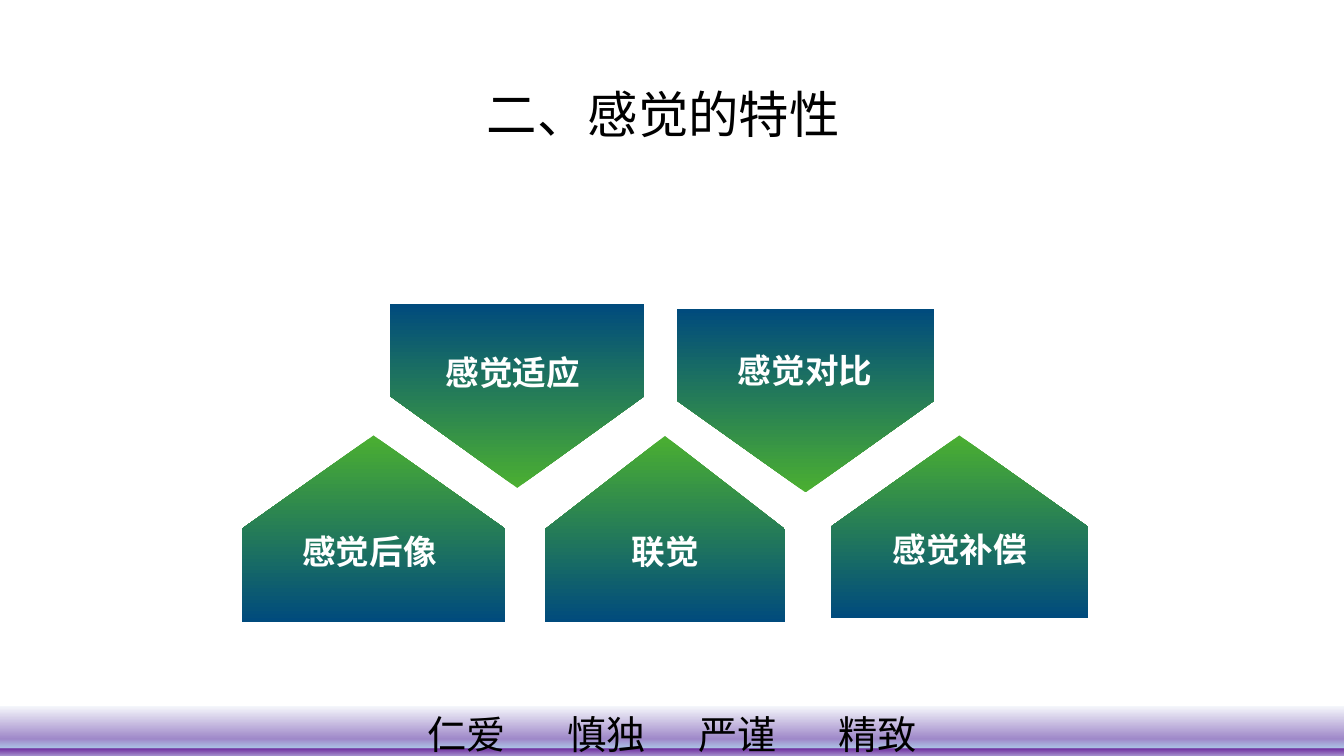
from dataclasses import dataclass

from lxml import etree
from pptx import Presentation
from pptx import util as u
from pptx.dml.color import RGBColor
from pptx.enum import shapes, text
from pptx.oxml import ns

PX = 9144
FONT = "Noto Sans CJK SC"
WHITE = RGBColor(0xFF, 0xFF, 0xFF)
BLACK = RGBColor(0x00, 0x00, 0x00)
GREEN = RGBColor(0x4B, 0xAF, 0x31)
BLUE = RGBColor(0x00, 0x4B, 0x7D)
PLATE_STOPS = [(0, GREEN), (100, BLUE)]
FOOTER_STOPS = [
    (0, RGBColor(0xF6, 0xF8, 0xFC)),
    (58, RGBColor(0x9F, 0x89, 0xC9)),
    (74, RGBColor(0xAB, 0xC0, 0xE4)),
    (75, RGBColor(0x70, 0x30, 0xA0)),
    (93, RGBColor(0xB7, 0xB5, 0xDE)),
    (96, RGBColor(0xC3, 0xCB, 0xE8)),
    (98, RGBColor(0xC9, 0xD6, 0xED)),
    (99, RGBColor(0xCD, 0xDF, 0xF1)),
    (100, RGBColor(0xC7, 0xD5, 0xED)),
]
FOOTER_WORDS = ["仁爱", "慎独", "严谨", "精致"]
FOOTER_TABS = [139, 269, 408]


@dataclass(frozen=True)
class Area:
    left: int
    top: int
    width: int
    height: int

    def emu(self) -> list[int]:
        return [side * PX for side in (self.left, self.top, self.width, self.height)]


@dataclass(frozen=True)
class Plate:
    label: str
    area: Area
    label_area: Area
    rotation: int


UP, DOWN = 270, 90
PLATES = [
    Plate("感觉补偿", Area(824, 432, 255, 181), Area(840, 525, 224, 69), UP),
    Plate("感觉对比", Area(672, 306, 255, 182), Area(671, 347, 255, 69), DOWN),
    Plate("感觉后像", Area(240, 432, 261, 185), Area(252, 527, 229, 70), UP),
    Plate("联觉", Area(541, 432, 238, 185), Area(556, 527, 208, 70), UP),
    Plate("感觉适应", Area(387, 302, 252, 182), Area(393, 349, 231, 69), DOWN),
]


def add_plain_shape(page, kind: shapes.MSO_SHAPE, area: Area):
    shape = page.shapes.add_shape(kind, *area.emu())
    shape.shadow.inherit = False
    shape.line.fill.background()
    return shape


def fill_gradient(shape, stops: list[tuple[int, RGBColor]], angle: int) -> None:
    shape.fill.gradient()
    shape.fill.gradient_angle = angle
    stop_list = shape.element.spPr.find(".//" + ns.qn("a:gsLst"))
    for stop in list(stop_list):
        stop_list.remove(stop)
    for position, color in stops:
        stop = etree.SubElement(stop_list, ns.qn("a:gs"), pos=str(position * 1000))
        etree.SubElement(stop, ns.qn("a:srgbClr"), val=str(color))


def write_text(box, words: str, size: int, color: RGBColor, align: text.PP_ALIGN,
               anchor: text.MSO_ANCHOR, margin: int = 0, bold: bool = False,
               tabs: tuple[int, ...] | list[int] = ()) -> None:
    frame = box.text_frame
    frame.word_wrap = True
    frame.vertical_anchor = anchor
    frame.margin_left = margin * PX
    frame.margin_right = frame.margin_top = frame.margin_bottom = 0
    para = frame.paragraphs[0]
    para.text = words
    para.alignment = align
    if tabs:
        tab_list = etree.SubElement(para._p.get_or_add_pPr(), ns.qn("a:tabLst"))
        for tab in tabs:
            etree.SubElement(tab_list, ns.qn("a:tab"), pos=str(tab * PX), algn="l")
    para.font.size = u.Pt(size)
    para.font.bold = bold
    para.font.color.rgb = color
    para.font.name = FONT
    for span in para.runs:
        east_asian = etree.SubElement(span._r.get_or_add_rPr(), ns.qn("a:ea"))
        east_asian.set("typeface", FONT)


def add_footer(page) -> None:
    band = add_plain_shape(page, shapes.MSO_SHAPE.RECTANGLE, Area(0, 700, 1333, 57))
    fill_gradient(band, FOOTER_STOPS, 270)
    write_text(band, "\t".join(FOOTER_WORDS), 28, BLACK, text.PP_ALIGN.LEFT,
               text.MSO_ANCHOR.MIDDLE, margin=424, tabs=FOOTER_TABS)


def add_title(page) -> None:
    title = add_plain_shape(page, shapes.MSO_SHAPE.RECTANGLE, Area(473, 77, 515, 71))
    title.fill.solid()
    title.fill.fore_color.rgb = WHITE
    write_text(title, "二、感觉的特性", 36, BLACK, text.PP_ALIGN.LEFT,
               text.MSO_ANCHOR.MIDDLE, margin=10)


def add_plate(page, plate: Plate) -> None:
    area = plate.area
    shift = (area.width - area.height) // 2
    unrotated = Area(area.left + shift, area.top - shift, area.height, area.width)
    pentagon = add_plain_shape(page, shapes.MSO_SHAPE.PENTAGON, unrotated)
    pentagon.rotation = plate.rotation
    fill_gradient(pentagon, PLATE_STOPS, 180)
    label = page.shapes.add_textbox(*plate.label_area.emu())
    write_text(label, plate.label, 24, WHITE, text.PP_ALIGN.CENTER,
               text.MSO_ANCHOR.TOP, bold=True)


def main() -> None:
    deck = Presentation()
    deck.slide_width = 1333 * PX
    deck.slide_height = 750 * PX
    page = deck.slides.add_slide(deck.slide_layouts[6])
    add_footer(page)
    for plate in PLATES:
        add_plate(page, plate)
    add_title(page)
    deck.save("out.pptx")


if __name__ == "__main__":
    main()
